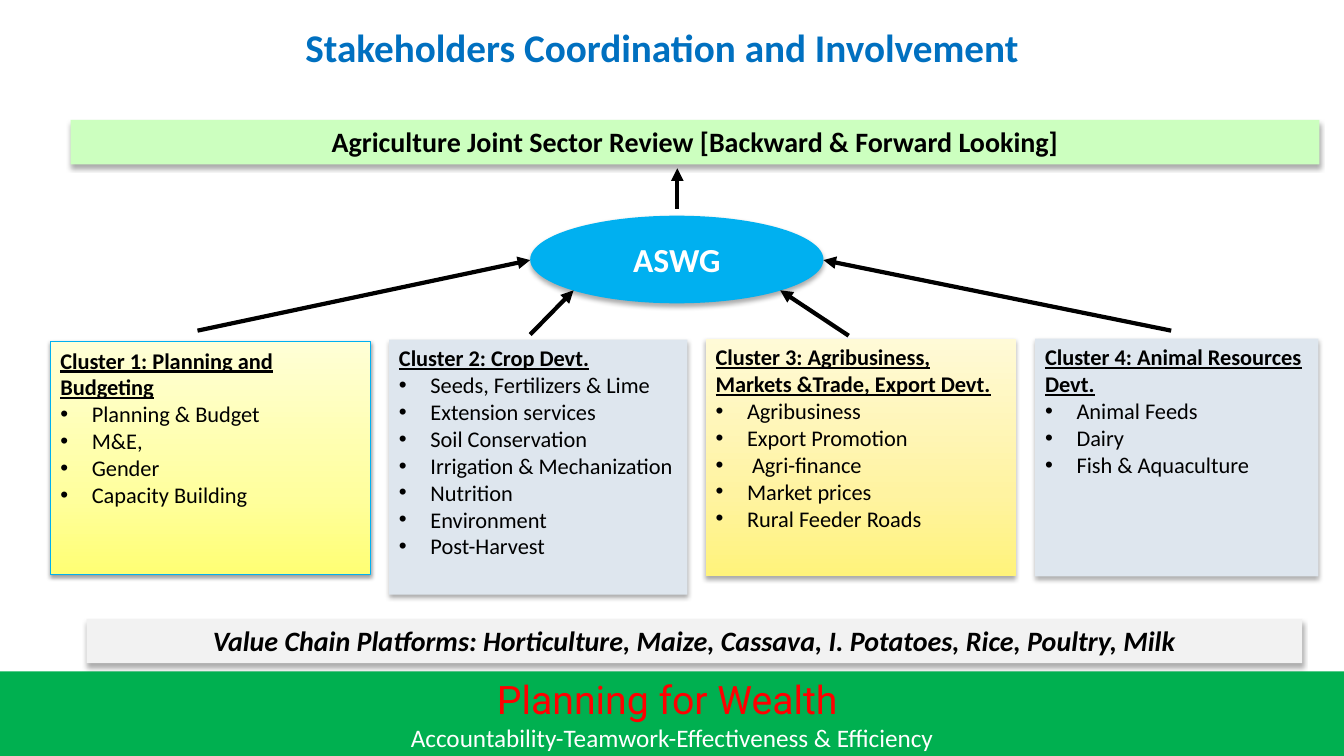
from copy import deepcopy

from lxml.etree import SubElement
from pptx import Presentation
from pptx.dml.color import RGBColor
from pptx.enum.shapes import MSO_CONNECTOR as Link, MSO_SHAPE as Form
from pptx.enum.text import MSO_ANCHOR as Anchor, PP_ALIGN as Align
from pptx.oxml.ns import qn
from pptx.util import Pt

BLACK = RGBColor(0x00, 0x00, 0x00)
WHITE = RGBColor(0xFF, 0xFF, 0xFF)
RED = RGBColor(0xFF, 0x00, 0x00)
BLUE = RGBColor(0x00, 0x70, 0xC0)
SKY = RGBColor(0x00, 0xB0, 0xF0)
GREEN = RGBColor(0x00, 0xB0, 0x50)
MINT = RGBColor(0xCC, 0xFF, 0xBF)
PALE = RGBColor(0xF2, 0xF2, 0xF2)
MIST = RGBColor(0xDE, 0xE6, 0xEE)
YELLOW = [RGBColor(0xFF, 0xFF, 0x74), RGBColor(0xFF, 0xFF, 0x9F), RGBColor(0xFF, 0xFF, 0xD6)]
GOLD = [RGBColor(0xFF, 0xF3, 0x7B), RGBColor(0xFF, 0xF3, 0xA1), RGBColor(0xFF, 0xFA, 0xD7)]

SOFT = (32, 3.5, 2.2)
DEEP = (38, 3.15, 1.57)

CLUSTERS = [
    ((36, 244.1, 229, 166.3), YELLOW, SKY, DEEP, "Cluster 1: Planning and Budgeting",
     ["Planning & Budget", "M&E,", "Gender", "Capacity Building"]),
    ((277.9, 242.6, 213.1, 182.2), MIST, None, SOFT, "Cluster 2: Crop Devt.",
     ["Seeds, Fertilizers & Lime", "Extension services", "Soil Conservation",
      "Irrigation & Mechanization", "Nutrition", "Environment", "Post-Harvest"]),
    ((504, 241.9, 221.8, 169.9), GOLD, None, SOFT,
     "Cluster 3: Agribusiness, Markets &Trade, Export Devt.",
     ["Agribusiness", "Export Promotion", " Agri-finance", "Market prices", "Rural Feeder Roads"]),
    ((739.4, 241.9, 202.3, 169.9), MIST, None, SOFT, "Cluster 4: Animal Resources Devt.",
     ["Animal Feeds", "Dairy", "Fish & Aquaculture"]),
]

ARROWS = [
    (141.1, 236.2, 378.7, 185.8),
    (378.7, 239, 409.7, 207.4),
    (606.2, 239.8, 557.3, 207.4),
    (836.6, 236.2, 588.2, 185.8),
    (483.8, 149, 483.8, 120.2),
]


class Board:
    def __init__(self, slide, font="Calibri"):
        self.slide = slide
        self.font = font

    def style(self, para, size, color, align=Align.LEFT, bold=False, italic=False,
              under=False, font=None):
        para.alignment = align
        for run in para.runs:
            face = run.font
            face.name = font or self.font
            face.size = Pt(size)
            face.color.rgb = color
            face.bold, face.italic, face.underline = bold, italic, under

    def title(self, box, text):
        frame = self.slide.shapes.add_textbox(*map(Pt, box)).text_frame
        frame.word_wrap = True
        frame.text = text
        self.style(frame.paragraphs[0], 28, BLUE, bold=True)

    def shape(self, box, fill, form=Form.RECTANGLE, line=None, shade=SOFT, anchor=Anchor.TOP):
        item = self.slide.shapes.add_shape(form, *map(Pt, box))
        if isinstance(fill, list):
            self.blend(item, fill)
        else:
            item.fill.solid()
            item.fill.fore_color.rgb = fill
        if line is None:
            item.line.fill.background()
        else:
            item.line.color.rgb = line
            item.line.width = Pt(0.75)
        item.shadow.inherit = False
        if shade:
            self.shade(item, *shade)
        item.text_frame.word_wrap = True
        item.text_frame.vertical_anchor = anchor
        return item.text_frame

    def blend(self, item, colors):
        item.fill.gradient()
        item.fill.gradient_angle = 90
        stops = item.fill._xPr.find(qn("a:gradFill")).find(qn("a:gsLst"))
        stops.insert(1, deepcopy(stops[0]))
        for stop, color, place in zip(item.fill.gradient_stops, colors, (0, 0.35, 1)):
            stop.color.rgb = color
            stop.position = place

    def shade(self, item, alpha, blur, dist):
        effects = item._element.spPr.find(qn("a:effectLst"))
        outer = SubElement(effects, qn("a:outerShdw"), blurRad=str(Pt(blur)),
                           dist=str(Pt(dist)), dir="5400000", rotWithShape="0")
        tone = SubElement(outer, qn("a:srgbClr"), val=str(BLACK))
        SubElement(tone, qn("a:alpha"), val=str(alpha * 1000))

    def label(self, box, fill, text, size=20, color=BLACK, italic=False, **look):
        frame = self.shape(box, fill, **look)
        frame.text = text
        self.style(frame.paragraphs[0], size, color, Align.CENTER, bold=True, italic=italic)

    def cluster(self, box, fill, line, shade, head, items):
        frame = self.shape(box, fill, line=line, shade=shade)
        frame.text = head
        self.style(frame.paragraphs[0], 16, BLACK, bold=True, under=True)
        for text in items:
            para = frame.add_paragraph()
            para.text = text
            self.style(para, 16, BLACK)
            self.bullet(para)

    def bullet(self, para):
        props = para._p.get_or_add_pPr()
        props.set("marL", str(Pt(22.5)))
        props.set("indent", str(-Pt(22.5)))
        SubElement(props, qn("a:buFont"), typeface="Arial")
        SubElement(props, qn("a:buChar"), char="•")

    def arrow(self, *ends):
        link = self.slide.shapes.add_connector(Link.STRAIGHT, *map(Pt, ends))
        link.line.color.rgb = BLACK
        link.line.width = Pt(3)
        SubElement(link.line._get_or_add_ln(), qn("a:tailEnd"), type="triangle")
        SubElement(link._element.spPr, qn("a:effectLst"))

    def footer(self, box, motto, values):
        frame = self.shape(box, GREEN, shade=None, anchor=Anchor.MIDDLE)
        frame.text = motto
        self.style(frame.paragraphs[0], 28, RED, Align.CENTER, font="Roboto")
        para = frame.add_paragraph()
        para.text = values
        self.style(para, 18, WHITE, Align.CENTER)


def main():
    deck = Presentation()
    deck.slide_width, deck.slide_height = Pt(960), Pt(540)
    board = Board(deck.slides.add_slide(deck.slide_layouts[6]))
    board.footer((0, 479.5, 960, 60.5), "Planning for Wealth ",
                 "Accountability-Teamwork-Effectiveness & Efficiency")
    board.title((211, 13, 599, 57), "Stakeholders Coordination and Involvement")
    board.label((378.7, 154.1, 209.5, 62.6), SKY, "ASWG", 24, WHITE,
                form=Form.OVAL, anchor=Anchor.MIDDLE)
    board.label((50.4, 85.7, 892.1, 31.7), MINT,
                "Agriculture Joint Sector Review [Backward & Forward Looking]")
    board.label((61.9, 442.1, 868.3, 31.7), PALE,
                "Value Chain Platforms: Horticulture, Maize, Cassava, I. Potatoes, Rice, Poultry, Milk",
                italic=True)
    for cluster in CLUSTERS:
        board.cluster(*cluster)
    for ends in ARROWS:
        board.arrow(*ends)
    deck.save("out.pptx")


if __name__ == "__main__":
    main()
